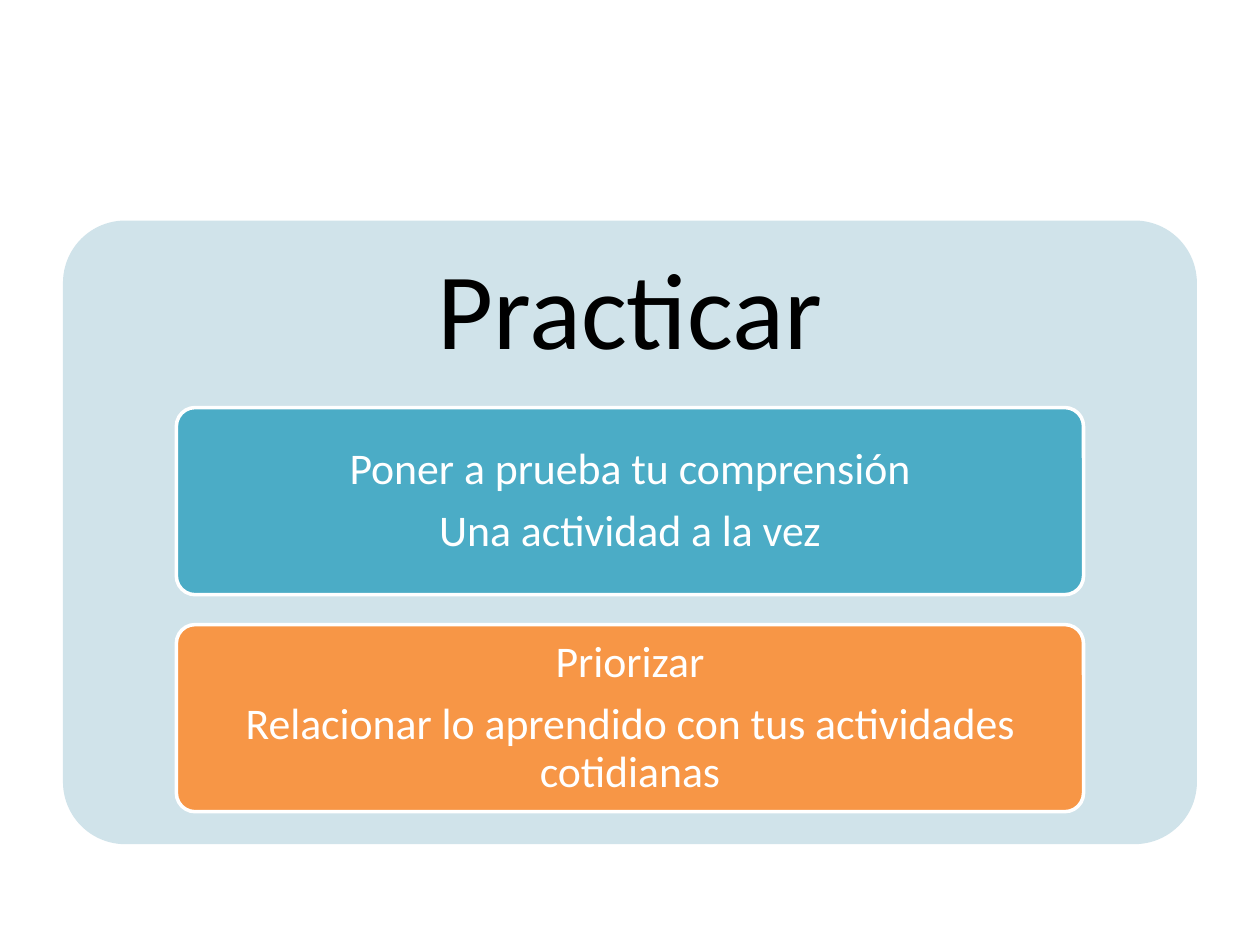
from pptx import Presentation
from pptx import util as u
from pptx.dml.color import RGBColor
from pptx.enum import shapes, text

Pt = u.Pt


def color(hex_value):
    return RGBColor.from_string(hex_value)


def write(frame, lines, size, ink, inset_x, inset_y):
    frame.word_wrap = True
    frame.vertical_anchor = text.MSO_ANCHOR.MIDDLE
    frame.margin_left = frame.margin_right = Pt(inset_x)
    frame.margin_top = frame.margin_bottom = Pt(inset_y)
    for index, line in enumerate(lines):
        paragraph = frame.add_paragraph() if index else frame.paragraphs[0]
        paragraph.text = line
        paragraph.alignment = text.PP_ALIGN.CENTER
        paragraph.line_spacing = 0.9
        paragraph.space_after = Pt(size * 0.35)
        paragraph.font.name = "Calibri"
        paragraph.font.size = Pt(size)
        paragraph.font.color.rgb = color(ink)


def rounded_box(slide, left, top, width, height, fill, outline=None):
    box = slide.shapes.add_shape(
        shapes.MSO_SHAPE.ROUNDED_RECTANGLE, Pt(left), Pt(top), Pt(width), Pt(height)
    )
    box.adjustments[0] = 0.1
    box.shadow.inherit = False
    box.fill.solid()
    box.fill.fore_color.rgb = color(fill)
    if outline:
        box.line.color.rgb = color(outline)
        box.line.width = Pt(2)
    else:
        box.line.fill.background()
    return box


def practice_panel(slide, left, top, width, height, title, cards):
    rounded_box(slide, left, top, width, height, "D0E3EA")
    title_height = height * 0.3
    heading = slide.shapes.add_textbox(Pt(left), Pt(top), Pt(width), Pt(title_height))
    write(heading.text_frame, [title], 62, "000000", 18.6, 18.6)

    card_left, card_width = left + width * 0.1, width * 0.8
    card_height, card_pitch = height * 0.3, height * 0.348
    for row, (fill, lines) in enumerate(cards):
        card_top = top + title_height + row * card_pitch
        card = rounded_box(
            slide, card_left, card_top, card_width, card_height, fill, "FFFFFF"
        )
        write(card.text_frame, lines, 25, "FFFFFF", 5, 3.75)


def main():
    deck = Presentation()
    deck.slide_width, deck.slide_height = Pt(720), Pt(540)
    slide = deck.slides.add_slide(deck.slide_layouts[6])
    cards = [
        ("4BACC6", ["Poner a prueba tu comprensión", "Una actividad a la vez"]),
        ("F79646", ["Priorizar", "Relacionar lo aprendido con tus actividades cotidianas"]),
    ]
    practice_panel(slide, 36, 126, 648, 356.4, "Practicar", cards)
    deck.save("out.pptx")


if __name__ == "__main__":
    main()
